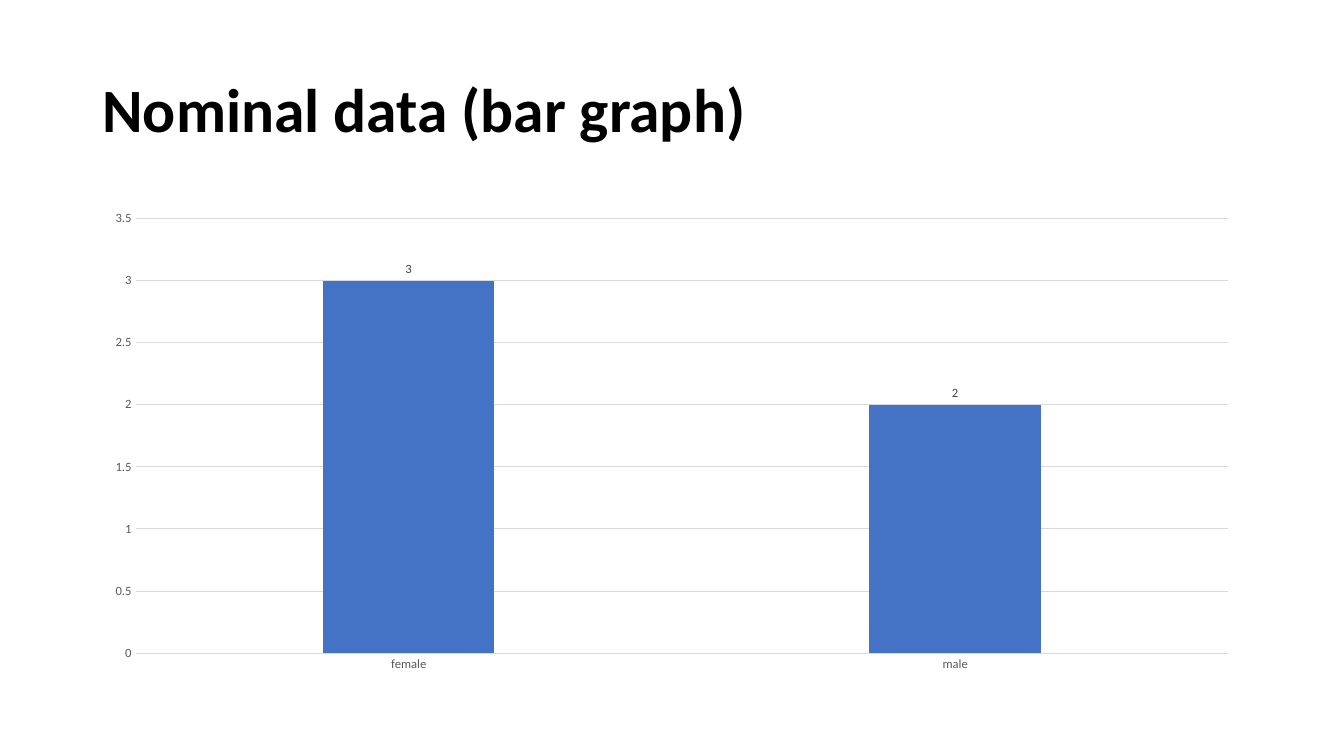
"""Build a slide with a bar graph of nominal data."""
import pptx
import pptx.chart.data
import pptx.dml.color
import pptx.enum.chart
import pptx.enum.text
import pptx.util

BLACK = pptx.dml.color.RGBColor(0x00, 0x00, 0x00)
BLUE = pptx.dml.color.RGBColor(0x44, 0x72, 0xC4)
LABEL_GRAY = pptx.dml.color.RGBColor(0x40, 0x40, 0x40)
AXIS_GRAY = pptx.dml.color.RGBColor(0x59, 0x59, 0x59)
LINE_GRAY = pptx.dml.color.RGBColor(0xD9, 0xD9, 0xD9)
FONT = "Calibri"
EMU_PER_PX = 9525


def px(length):
    """Turn whole pixels into EMU."""
    return pptx.util.Emu(length * EMU_PER_PX)


def set_values(target, values):
    """Set each named attribute of the target."""
    for name, value in values.items():
        setattr(target, name, value)


def style_font(font, size, color, bold=False):
    """Give a font its face, size, weight and colour."""
    set_values(font, {"name": FONT, "size": pptx.util.Pt(size), "bold": bold})
    font.color.rgb = color


def style_line(line):
    """Give a chart line its thin gray stroke."""
    line.color.rgb = LINE_GRAY
    line.width = pptx.util.Pt(0.75)


def add_title(page, text):
    """Fill and place the title placeholder."""
    title = page.shapes.title
    set_values(title, {"left": px(88), "top": px(38), "width": px(1104), "height": px(139)})
    frame = title.text_frame
    set_values(frame, {
        "text": text,
        "word_wrap": True,
        "auto_size": pptx.enum.text.MSO_AUTO_SIZE.NONE,
        "vertical_anchor": pptx.enum.text.MSO_ANCHOR.MIDDLE,
    })
    para = frame.paragraphs[0]
    set_values(para, {"alignment": pptx.enum.text.PP_ALIGN.LEFT, "line_spacing": 0.9})
    style_font(para.runs[0].font, 44, BLACK, True)


def style_axis(axis):
    """Format the labels and tick marks of an axis."""
    no_tick = pptx.enum.chart.XL_TICK_MARK.NONE
    set_values(axis, {"major_tick_mark": no_tick, "minor_tick_mark": no_tick})
    style_font(axis.tick_labels.font, 9, AXIS_GRAY)


def add_bar_graph(page, counts):
    """Add a column chart of the count in each category."""
    data = pptx.chart.data.CategoryChartData()
    data.categories = list(counts)
    data.add_series("Series 1", list(counts.values()))
    chart = page.shapes.add_chart(
        pptx.enum.chart.XL_CHART_TYPE.COLUMN_CLUSTERED,
        px(88), px(192), px(1104), px(457), data,
    ).chart
    set_values(chart, {"has_legend": False, "has_title": False})
    style_font(chart.font, 10, BLACK)

    for axis in (chart.category_axis, chart.value_axis):
        style_axis(axis)
    style_line(chart.category_axis.format.line)
    chart.value_axis.format.line.fill.background()
    set_values(chart.value_axis, {
        "minimum_scale": 0, "maximum_scale": 3.5, "major_unit": 0.5,
        "has_major_gridlines": True,
    })
    style_line(chart.value_axis.major_gridlines.format.line)

    plot = chart.plots[0]
    set_values(plot, {
        "gap_width": 219, "overlap": -27,
        "vary_by_categories": False, "has_data_labels": True,
    })
    set_values(plot.data_labels, {
        "show_value": True,
        "position": pptx.enum.chart.XL_LABEL_POSITION.OUTSIDE_END,
    })
    style_font(plot.data_labels.font, 9, LABEL_GRAY)
    fill = plot.series[0].format.fill
    fill.solid()
    fill.fore_color.rgb = BLUE


def main():
    """Build and save the deck."""
    deck = pptx.Presentation()
    set_values(deck, {"slide_width": px(1280), "slide_height": px(720)})
    page = deck.slides.add_slide(deck.slide_layouts.get_by_name("Title Only"))
    add_title(page, "Nominal data (bar graph)")
    add_bar_graph(page, {"female": 3, "male": 2})
    deck.save("out.pptx")


if __name__ == "__main__":
    main()
